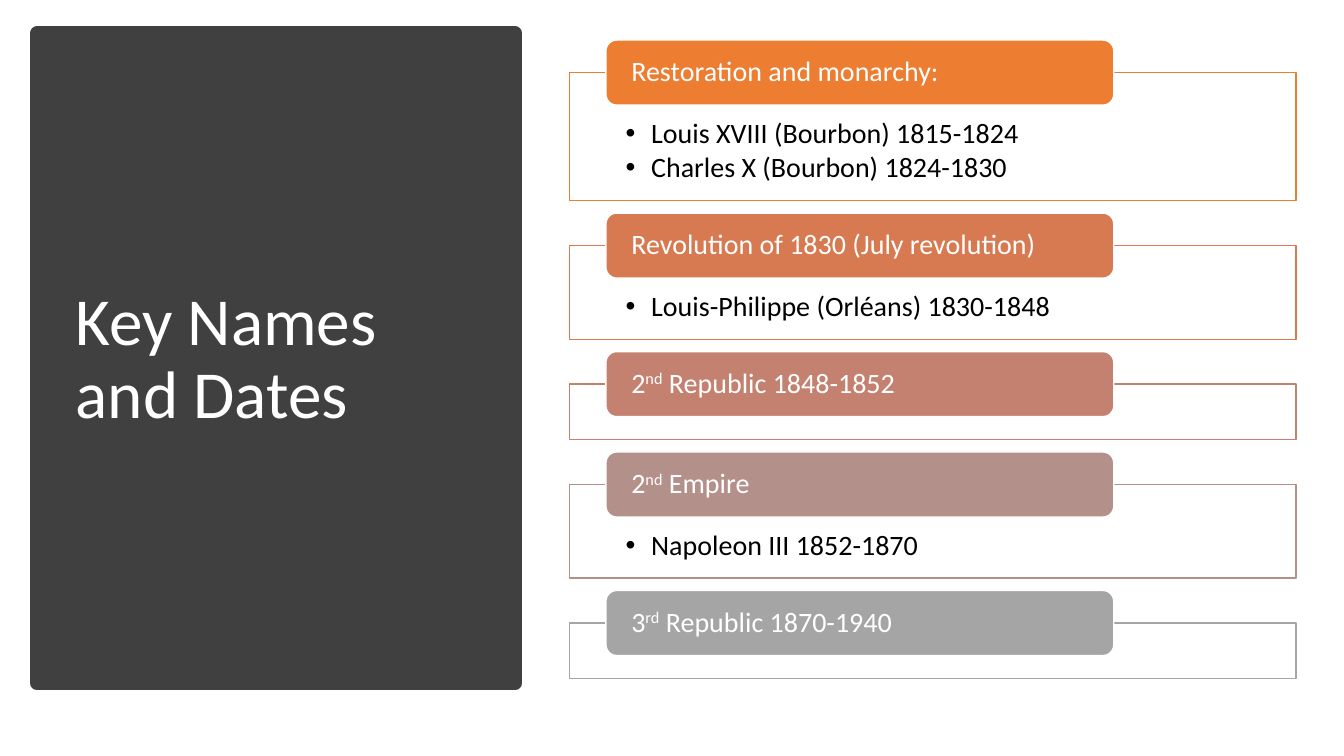
import pptx
import pptx.util
import pptx.dml.color
import pptx.enum.shapes
import pptx.enum.text
import pptx.oxml
import pptx.oxml.ns

Cm, Pt = pptx.util.Cm, pptx.util.Pt
RGB = pptx.dml.color.RGBColor.from_string
SHAPE = pptx.enum.shapes.MSO_SHAPE
ANCHOR = pptx.enum.text.MSO_ANCHOR
LEFT = pptx.enum.text.PP_ALIGN.LEFT

COLORS = {
    "panel": "404040", "white": "FFFFFF", "black": "000000",
    "restoration": "ED7D31", "july": "D87A51", "republic2": "C48170",
    "empire2": "B4908B", "republic3": "A5A5A5",
}

# Colour, heading as (text, is superscript) runs, box height in cm, list items
PERIODS = [
    ("restoration", [("Restoration and monarchy:", False)], 3.23,
     ["Louis XVIII (Bourbon) 1815-1824", "Charles X (Bourbon) 1824-1830"]),
    ("july", [("Revolution of 1830 (July revolution)", False)], 2.36,
     ["Louis-Philippe (Orléans) 1830-1848"]),
    ("republic2", [("2", False), ("nd", True), (" Republic 1848-1852", False)], 1.4, []),
    ("empire2", [("2", False), ("nd", True), (" Empire", False)], 2.36,
     ["Napoleon III 1852-1870"]),
    ("republic3", [("3", False), ("rd", True), (" Republic 1870-1940", False)], 1.4, []),
]
BOX_GAP, TAB_RISE = 1.13, 0.82

FRAMES = {
    "title": dict(word_wrap=True, vertical_anchor=ANCHOR.MIDDLE,
                  auto_size=pptx.enum.text.MSO_AUTO_SIZE.NONE),
    "box": dict(word_wrap=True, vertical_anchor=ANCHOR.TOP,
                margin_left=Cm(1.42), margin_right=Cm(1.42),
                margin_top=Cm(1.17), margin_bottom=Cm(0.41)),
    "tab": dict(word_wrap=True, vertical_anchor=ANCHOR.MIDDLE,
                margin_left=Cm(0.56), margin_right=Cm(0.56),
                margin_top=0, margin_bottom=0),
}


def add_box(kind, x, y, w, h, fill, line, width):
    sp = slide.shapes.add_shape(kind, Cm(x), Cm(y), Cm(w), Cm(h))
    sp.shadow.inherit = False
    sp.fill.solid()
    sp.fill.fore_color.rgb = RGB(COLORS[fill])
    sp.line.color.rgb = RGB(COLORS[line])
    sp.line.width = Pt(width)
    return sp


def write(p, runs, size, color, after=0):
    for name, value in dict(alignment=LEFT, line_spacing=0.9, space_before=Pt(0),
                            space_after=Pt(after)).items():
        setattr(p, name, value)
    for text, raised in runs:
        r = p.add_run()
        r.text = text
        for name, value in dict(name="Calibri", size=Pt(size)).items():
            setattr(r.font, name, value)
        r.font.color.rgb = RGB(COLORS[color])
        if raised:
            r._r.get_or_add_rPr().set("baseline", "30000")


prs = pptx.Presentation()
prs.slide_width, prs.slide_height = Cm(33.87), Cm(19.05)
slide = prs.slides.add_slide(prs.slide_layouts[5])

# Dark panel, behind the title
title = slide.shapes.title
panel = add_box(SHAPE.RECTANGLE, 0.94, 0.84, 12.04, 16.38, "panel", "panel", 10)
title._element.addprevious(panel._element)

# Title
for name, value in dict(left=1.65, top=1.78, width=10.57, height=14.6).items():
    setattr(title, name, Cm(value))
for name, value in FRAMES["title"].items():
    setattr(title.text_frame, name, value)
write(title.text_frame.paragraphs[0], [("Key Names and Dates", False)], 48, "white")

# Periods: outlined box with a list, and a coloured heading tab over its top edge
y = 1.83
for color, heading, height, items in PERIODS:
    box = add_box(SHAPE.RECTANGLE, 14.35, y, 18.31, height, "white", color, 1)
    tab = add_box(SHAPE.ROUNDED_RECTANGLE, 15.27, y - TAB_RISE, 12.8, 1.64,
                  color, "white", 1)
    for sp, part in ((box, "box"), (tab, "tab")):
        for name, value in FRAMES[part].items():
            setattr(sp.text_frame, name, value)
    write(tab.text_frame.paragraphs[0], heading, 20, "white")

    tf = box.text_frame
    for i, item in enumerate(items):
        p = tf.add_paragraph() if i else tf.paragraphs[0]
        write(p, [(item, False)], 20, "black", after=3)
        p.level = 1
        pPr = p._p.get_or_add_pPr()
        pPr.set("marL", str(Cm(0.64)))
        pPr.set("indent", str(-Cm(0.64)))
        for tag, attr, value in (("buFont", "typeface", "Arial"), ("buChar", "char", "•")):
            bullet = pptx.oxml.xmlchemy.OxmlElement("a:" + tag)
            bullet.set(attr, value)
            pPr.append(bullet)
    y += height + BOX_GAP

prs.save("out.pptx")
